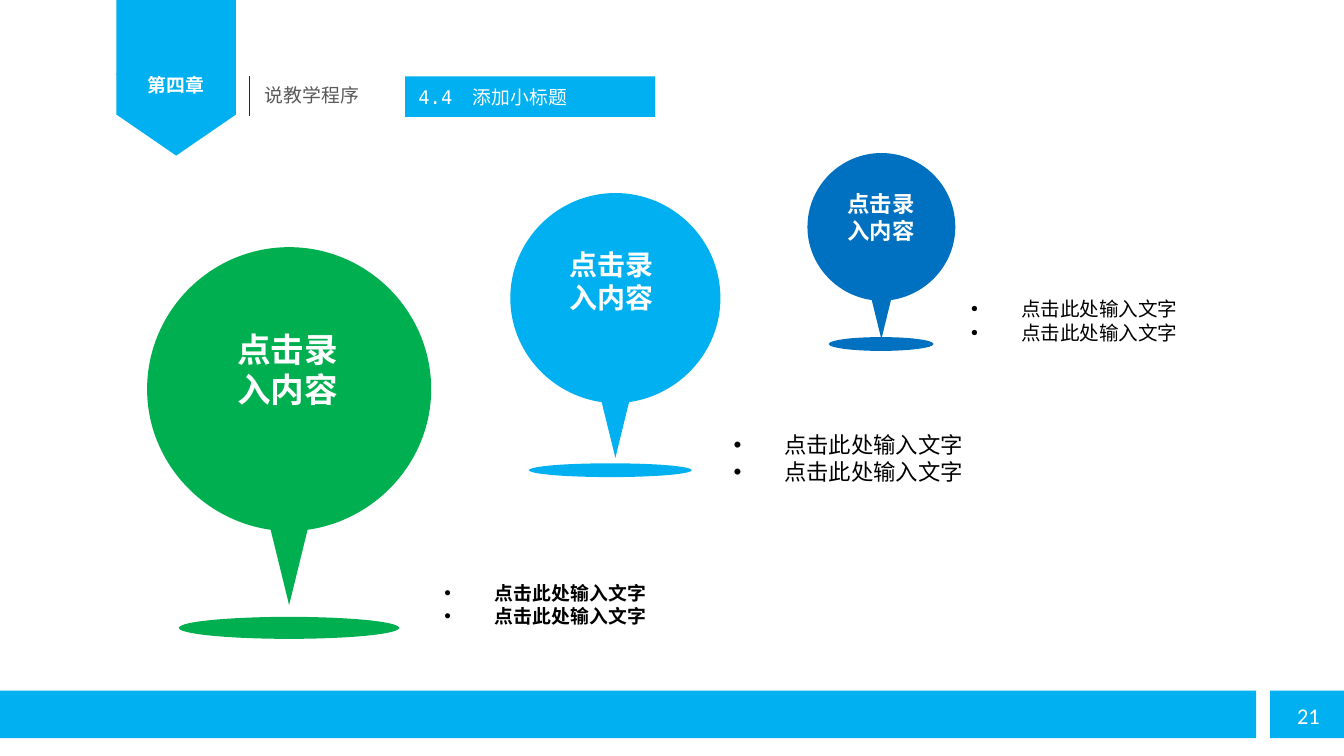
"""Build a chapter slide with three map pins of shrinking size and their notes."""
import lxml.etree
import pptx
import pptx.dml.color
import pptx.enum.shapes
import pptx.enum.text
import pptx.oxml.ns
import pptx.util

Pt = pptx.util.Pt
qn = pptx.oxml.ns.qn
SHAPE = pptx.enum.shapes.MSO_SHAPE
ALIGN = pptx.enum.text.PP_ALIGN
ANCHOR = pptx.enum.text.MSO_ANCHOR
FIT = pptx.enum.text.MSO_AUTO_SIZE
CJK = "Noto Sans CJK SC"
COLORS = {
    "sky": "00B0F0", "green": "00B050", "blue": "0070C0", "white": "FFFFFF",
    "black": "000000", "gray": "595959", "rule": "262626",
}


def paint(shape, color):
    shape.shadow.inherit = False
    shape.fill.solid()
    shape.fill.fore_color.rgb = pptx.dml.color.RGBColor.from_string(COLORS[color])
    shape.line.fill.background()


def write(shape, lines, size, color="white", font=CJK, bold=False, align=ALIGN.LEFT,
          anchor=ANCHOR.TOP, wrap=True, grow=True, inset=None, spacing=None,
          hanging=None, tab=None):
    frame = shape.text_frame
    frame.word_wrap = wrap
    frame.auto_size = FIT.SHAPE_TO_FIT_TEXT if grow else FIT.NONE
    frame.vertical_anchor = anchor
    if inset is not None:
        frame.margin_left = frame.margin_right = Pt(inset)
        frame.margin_top = frame.margin_bottom = Pt(inset)
    for index, line in enumerate(lines):
        paragraph = frame.add_paragraph() if index else frame.paragraphs[0]
        paragraph.alignment = align
        paragraph.line_spacing = spacing
        properties = paragraph._p.get_or_add_pPr()
        if hanging:
            properties.set("marL", str(Pt(hanging)))
            properties.set("indent", str(-Pt(hanging)))
            lxml.etree.SubElement(properties, qn("a:buFont"), typeface="Arial")
            lxml.etree.SubElement(properties, qn("a:buChar"), char="•")
        if tab:
            stops = lxml.etree.SubElement(properties, qn("a:tabLst"))
            lxml.etree.SubElement(stops, qn("a:tab"), pos=str(Pt(tab)), algn="l")
        run = paragraph.add_run()
        run.text = line
        run.font.size = Pt(size)
        run.font.bold = bold
        run.font.color.rgb = pptx.dml.color.RGBColor.from_string(COLORS[color])
        run.font.name = font
        lxml.etree.SubElement(run._r.get_or_add_rPr(), qn("a:ea"), typeface=CJK)


deck = pptx.Presentation()
deck.slide_width, deck.slide_height = Pt(720), Pt(405)
slide = deck.slides.add_slide(deck.slide_layouts[6])
shapes = slide.shapes

bars = []
for kind, left, top, width, height, turn in [
    (SHAPE.PENTAGON, 72.4, 29.4, 44, 64, 90),
    (SHAPE.RECTANGLE, 62.4, 0, 64, 40, 0),
    (SHAPE.RECTANGLE, 0, 370, 673, 25.5, 0),
    (SHAPE.RECTANGLE, 680.4, 370, 39.6, 25.5, 0),
    (SHAPE.RECTANGLE, 217, 41, 134, 21.7, 0),
]:
    bar = shapes.add_shape(kind, Pt(left), Pt(top), Pt(width), Pt(height))
    bar.rotation = turn
    paint(bar, "sky")
    bars.append(bar)
write(bars[-1], ["4.4\t添加小标题"], 10.13, font="DejaVu Sans Mono",
      anchor=ANCHOR.MIDDLE, grow=False, tab=29)

divider = shapes.add_connector(
    pptx.enum.shapes.MSO_CONNECTOR.STRAIGHT, Pt(133.7), Pt(40.8), Pt(133.7), Pt(62))
divider.line.color.rgb = pptx.dml.color.RGBColor.from_string(COLORS["rule"])
divider.line.width = Pt(0.75)
lxml.etree.SubElement(divider._element.spPr, qn("a:effectLst"))

page_number = shapes.add_textbox(Pt(687.8), Pt(372.6), Pt(28.8), Pt(21.6))
write(page_number, ["21"], 12, font="Calibri", wrap=False)
chapter = shapes.add_textbox(Pt(62.3), Pt(33.4), Pt(64), Pt(18.7))
write(chapter, ["第四章"], 10.13, font="Calibri", bold=True,
      align=ALIGN.CENTER, inset=0, spacing=1.5)
topic = shapes.add_textbox(Pt(134.6), Pt(41), Pt(144.7), Pt(19.4))
write(topic, ["说教学程序"], 10.13, color="gray")

for left, top, width, height, size, bold in [
    (385.9, 227.5, 170, 36, 12, False),
    (230.9, 308.2, 185.8, 31.7, 10.13, True),
    (513.1, 155.7, 154, 32.4, 10.5, False),
]:
    note = shapes.add_textbox(Pt(left), Pt(top), Pt(width), Pt(height))
    write(note, ["点击此处输入文字"] * 2, size, color="black", bold=bold, hanging=27)

OUTLINE = [
    ((0.55, -1), (1, -0.55), (1, 0)),
    ((1, 0.5), (0.62, 0.92), (0.13, 0.99)),
    ((0, 1.52),),
    ((-0.13, 0.99),),
    ((-0.62, 0.92), (-1, 0.5), (-1, 0)),
    ((-1, -0.55), (-0.55, -1), (0, -1)),
]
for color, center, top, radius, base, label, size in [
    ("green", 154.9, 132.4, 76.1, (95.8, 330.5, 118.1, 11.8), (119.5, 172.6, 69.1, 51.1), 18),
    ("sky", 329.7, 103.4, 56.3, (283.4, 248.2, 87.2, 7.4), (297.7, 128.9, 59.8, 43.9), 15),
    ("blue", 472.2, 82, 39.6, (443.9, 180.6, 56.2, 7.4), (446.4, 98.6, 51.1, 36), 12),
]:
    pin = shapes.add_group_shape().shapes
    builder = pin.build_freeform(Pt(center), Pt(top))
    builder.add_line_segments(
        [(Pt(center + radius * stretch[-1][0]), Pt(top + radius * (1 + stretch[-1][1])))
         for stretch in OUTLINE], close=True)
    balloon = builder.convert_to_shape()
    segments = list(balloon._element.iter(qn("a:lnTo")))
    for segment, stretch in zip(segments, OUTLINE):
        if len(stretch) == 3:
            segment.tag = qn("a:cubicBezTo")
            for place, (x, y) in enumerate(stretch[:2]):
                handle = lxml.etree.Element(
                    qn("a:pt"), x=str(Pt(radius * (1 + x))), y=str(Pt(radius * (1 + y))))
                segment.insert(place, handle)
    ground = pin.add_shape(SHAPE.OVAL, *map(Pt, base))
    caption = pin.add_shape(SHAPE.RECTANGLE, *map(Pt, label))
    for part in (balloon, ground, caption):
        paint(part, color)
    write(caption, ["点击录", "入内容"], size, bold=True, align=ALIGN.CENTER, wrap=False)

deck.save("out.pptx")
